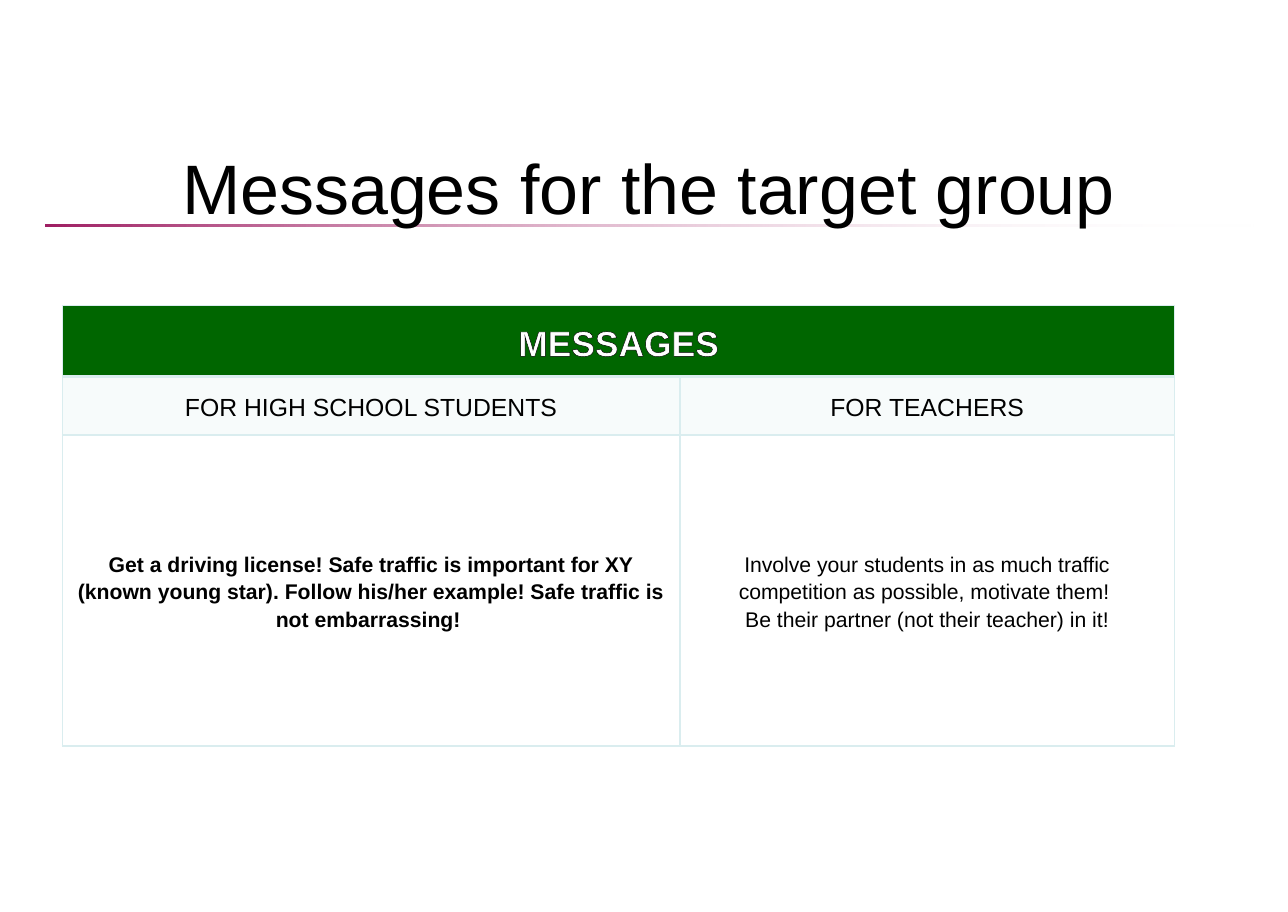
from dataclasses import dataclass

from lxml import etree
from pptx import Presentation
from pptx.dml.color import RGBColor
from pptx.enum.shapes import MSO_SHAPE
from pptx.enum.text import MSO_ANCHOR, PP_ALIGN
from pptx.oxml import parse_xml
from pptx.oxml.ns import nsdecls, qn
from pptx.slide import Slide
from pptx.table import _Cell
from pptx.text.text import TextFrame
from pptx.util import Pt

RECTANGLE = MSO_SHAPE.RECTANGLE
MIDDLE = MSO_ANCHOR.MIDDLE
CENTER = PP_ALIGN.CENTER

SLIDE_WIDTH, SLIDE_HEIGHT = 729, 516
LEFT = 25.8
FONT = "Arial"
BLACK, WHITE = "000000", "FFFFFF"
GREEN, MAGENTA, PALE_BLUE = "006600", "9F1F63", "DAEDEF"
COLUMN_WIDTHS = (349.4, 280.1)
ROW_HEIGHTS = (40.32, 33.12, 175.8)
CELL_INSETS = {"margin_left": Pt(5), "margin_right": Pt(5),
               "margin_top": 0, "margin_bottom": 0}
NO_INSETS = dict.fromkeys(CELL_INSETS, 0)


@dataclass(frozen=True)
class TextStyle:
    size: float
    color: str = BLACK
    bold: bool = False
    outlined: bool = False
    line_spacing: float = 1.15


@dataclass(frozen=True)
class MessageCell:
    row: int
    column: int
    text: str
    style: TextStyle
    fill: str | None = None
    opacity: int = 100


HEADING = TextStyle(20, WHITE, bold=True, outlined=True)
AUDIENCE = TextStyle(14, outlined=True)
CELLS = (
    MessageCell(0, 0, "MESSAGES", HEADING, GREEN),
    MessageCell(1, 0, "FOR HIGH SCHOOL STUDENTS", AUDIENCE, PALE_BLUE, 20),
    MessageCell(1, 1, "FOR TEACHERS", AUDIENCE, PALE_BLUE, 20),
    MessageCell(2, 0, "Get a driving license! Safe traffic is important for XY "
                "(known young star). Follow his/her example! Safe traffic is "
                "not embarrassing! ", TextStyle(12, bold=True)),
    MessageCell(2, 1, "Involve your students in as much traffic competition as "
                "possible, motivate them! \n"
                "Be their partner (not their teacher) in it!",
                TextStyle(12, outlined=True)),
)


def rgb(color: str) -> RGBColor:
    return RGBColor.from_string(color)


def set_attributes(target: object, values: dict) -> None:
    for name, value in values.items():
        setattr(target, name, value)


def set_opacity(parent: etree._Element, percent: int) -> None:
    """Make the first colour found inside the element see-through."""
    color = parent.find(f".//{qn('a:srgbClr')}")
    etree.SubElement(color, qn("a:alpha"), val=str(percent * 1000))


def line_element(tag: str, color: str, width: float) -> etree._Element:
    return parse_xml(
        f'<a:{tag} {nsdecls("a")} w="{Pt(width)}"><a:solidFill>'
        f'<a:srgbClr val="{color}"/></a:solidFill></a:{tag}>')


def write_text(frame: TextFrame, text: str, style: TextStyle) -> None:
    para = frame.paragraphs[0]
    para.text = text
    set_attributes(para, {"alignment": CENTER, "line_spacing": style.line_spacing})
    for span in para.runs:
        set_attributes(span.font, {"name": FONT, "size": Pt(style.size),
                                   "bold": style.bold})
        span.font.color.rgb = rgb(style.color)
        if style.outlined:
            span.font._element.insert(0, line_element("ln", BLACK, 0.75))


def add_title(page: Slide) -> None:
    box = page.shapes.add_textbox(Pt(LEFT), Pt(88.56), Pt(682.8), Pt(33.84))
    set_attributes(box.text_frame, {"word_wrap": True, "vertical_anchor": MIDDLE,
                                    **NO_INSETS})
    write_text(box.text_frame, "Messages for the target group",
               TextStyle(39.6, line_spacing=1.0))


def add_fading_rule(page: Slide) -> None:
    rule = page.shapes.add_shape(RECTANGLE, Pt(LEFT), Pt(127.2), Pt(688.4), Pt(1.1))
    rule.shadow.inherit = False
    rule.line.fill.background()
    rule.fill.gradient()
    rule.fill.gradient_angle = 180
    for stop, color in zip(rule.fill.gradient_stops, (WHITE, MAGENTA)):
        stop.color.rgb = rgb(color)
    set_opacity(rule._element.spPr, 0)


def set_borders(cell: _Cell, row: int) -> None:
    """Draw all four edges, with a heavier one below the heading row."""
    widths = {"lnL": 1, "lnR": 1, "lnT": 2 if row == 1 else 1,
              "lnB": 2 if row == 0 else 1}
    properties = cell._tc.get_or_add_tcPr()
    for index, (tag, width) in enumerate(widths.items()):
        properties.insert(index, line_element(tag, PALE_BLUE, width))


def fill_cell(cell: _Cell, item: MessageCell) -> None:
    set_attributes(cell, {"vertical_anchor": MIDDLE, **CELL_INSETS})
    write_text(cell.text_frame, item.text, item.style)
    if item.fill is None:
        return
    cell.fill.solid()
    cell.fill.fore_color.rgb = rgb(item.fill)
    if item.opacity < 100:
        set_opacity(cell._tc.get_or_add_tcPr(), item.opacity)


def add_messages_table(page: Slide) -> None:
    table = page.shapes.add_table(
        len(ROW_HEIGHTS), len(COLUMN_WIDTHS), Pt(35.4), Pt(172.8),
        Pt(sum(COLUMN_WIDTHS)), Pt(sum(ROW_HEIGHTS))).table
    set_attributes(table, {"first_row": False, "horz_banding": False})
    for column, width in zip(table.columns, COLUMN_WIDTHS):
        column.width = Pt(width)
    for row, height in zip(table.rows, ROW_HEIGHTS):
        row.height = Pt(height)
    table.cell(0, 0).merge(table.cell(0, 1))
    for cell in table.iter_cells():
        cell.fill.background()
    for item in CELLS:
        fill_cell(table.cell(item.row, item.column), item)
    for index, row in enumerate(table.rows):
        for cell in row.cells:
            set_borders(cell, index)


def main() -> None:
    deck = Presentation()
    deck.slide_width = Pt(SLIDE_WIDTH)
    deck.slide_height = Pt(SLIDE_HEIGHT)
    page = deck.slides.add_slide(deck.slide_layouts[6])
    add_fading_rule(page)
    add_messages_table(page)
    add_title(page)
    deck.save("out.pptx")


if __name__ == "__main__":
    main()
